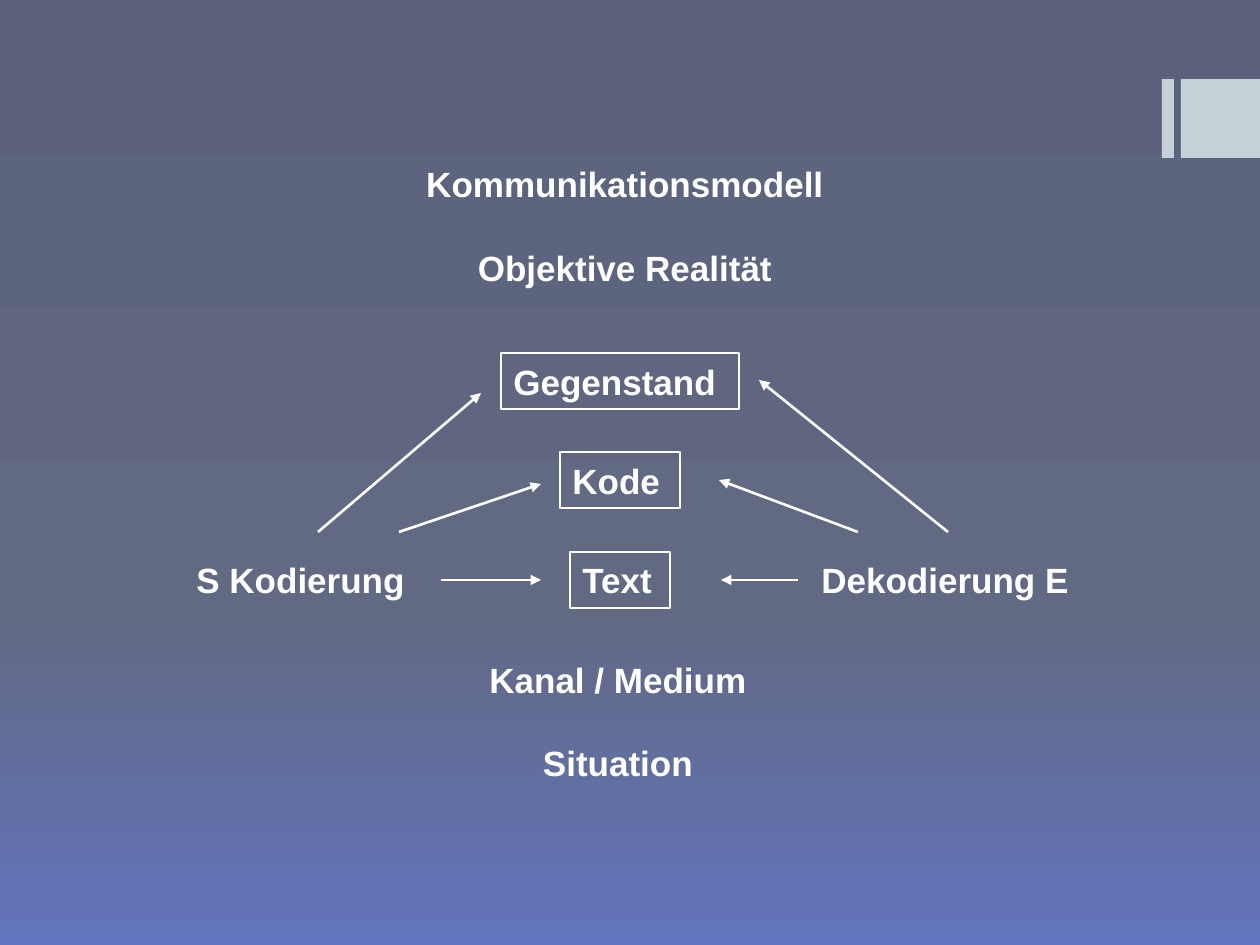
"""Build the slide showing the communication model with its coding and decoding paths."""
import copy

import lxml.etree
import pptx
import pptx.dml.color
import pptx.enum.shapes
import pptx.enum.text
import pptx.oxml.ns
import pptx.util

PX = 914400 // 126
SLIDE_SIZE = (1260, 945)
WHITE = pptx.dml.color.RGBColor(0xFF, 0xFF, 0xFF)
PALE = pptx.dml.color.RGBColor(0xC5, 0xD1, 0xD7)
BACKGROUND = [
    (0, pptx.dml.color.RGBColor(0x5B, 0x61, 0x7A)),
    (0.65, pptx.dml.color.RGBColor(0x62, 0x69, 0x83)),
    (1, pptx.dml.color.RGBColor(0x62, 0x74, 0xBE)),
]
LEFT = pptx.enum.text.PP_ALIGN.LEFT
CENTER = pptx.enum.text.PP_ALIGN.CENTER
RECTANGLE = pptx.enum.shapes.MSO_SHAPE.RECTANGLE

ROW_HEIGHT = 56
ROW_TOPS = {"object": 353, "code": 452, "text": 552}
SIDEBARS = [(1162, 79, 12, 79), (1181, 79, 79, 79)]
TITLE = ("Kommunikationsmodell", 223, 155, 804)
LABELS = [
    ("Objektive Realität", 223, 239, 804, CENTER),
    ("Kanal / Medium", 345, 651, 546, CENTER),
    ("Situation", 345, 735, 546, CENTER),
    ("S Kodierung", 184, ROW_TOPS["text"], 268, LEFT),
    ("Dekodierung E", 809, ROW_TOPS["text"], 377, LEFT),
]
BOX_CENTER = 620
BOXES = [
    ("Gegenstand", ROW_TOPS["object"], 238),
    ("Kode", ROW_TOPS["code"], 120),
    ("Text", ROW_TOPS["text"], 100),
]
ARROWS = [
    ((318, 532), (481, 393)),
    ((399, 532), (541, 484)),
    ((441, 580), (541, 580)),
    ((948, 532), (759, 380)),
    ((858, 532), (719, 480)),
    ((798, 580), (721, 580)),
]


def scale(*lengths):
    return [length * PX for length in lengths]


def paint_background(slide):
    fill = slide.background.fill
    fill.gradient()
    fill.gradient_angle = 270
    stop_list = slide.element.find(".//" + pptx.oxml.ns.qn("a:gsLst"))
    stop_list.append(copy.deepcopy(stop_list[0]))
    for stop, (position, color) in zip(fill.gradient_stops, BACKGROUND):
        stop.position = position
        stop.color.rgb = color


def write_text(shape, text, alignment):
    frame = shape.text_frame
    frame.word_wrap = True
    frame.auto_size = pptx.enum.text.MSO_AUTO_SIZE.NONE
    frame.vertical_anchor = pptx.enum.text.MSO_ANCHOR.MIDDLE
    paragraph = frame.paragraphs[0]
    paragraph.alignment = alignment
    run = paragraph.add_run()
    run.text = text
    run.font.name = "Arial"
    run.font.size = pptx.util.Pt(20)
    run.font.bold = True
    run.font.color.rgb = WHITE


def set_white_line(shape):
    shape.line.color.rgb = WHITE
    shape.line.width = pptx.util.Pt(1.5)


def add_sidebar(slide, bounds):
    shape = slide.shapes.add_shape(RECTANGLE, *scale(*bounds))
    shape.shadow.inherit = False
    shape.fill.solid()
    shape.fill.fore_color.rgb = PALE
    shape.line.fill.background()


def place_title(slide):
    text, left, top, width = TITLE
    title = slide.shapes.title
    title.left, title.top, title.width, title.height = scale(left, top, width, ROW_HEIGHT)
    write_text(title, text, CENTER)


def add_label(slide, text, left, top, width, alignment):
    label = slide.shapes.add_textbox(*scale(left, top, width, ROW_HEIGHT))
    write_text(label, text, alignment)


def add_box(slide, text, top, width):
    left = BOX_CENTER - width // 2
    box = slide.shapes.add_shape(RECTANGLE, *scale(left, top, width, ROW_HEIGHT))
    box.shadow.inherit = False
    box.fill.background()
    set_white_line(box)
    write_text(box, text, LEFT)


def add_arrow(slide, start, end):
    arrow = slide.shapes.add_connector(
        pptx.enum.shapes.MSO_CONNECTOR.STRAIGHT, *scale(*start, *end)
    )
    set_white_line(arrow)
    properties = arrow.element.spPr
    line = properties.find(pptx.oxml.ns.qn("a:ln"))
    lxml.etree.SubElement(line, pptx.oxml.ns.qn("a:tailEnd"), type="triangle")
    lxml.etree.SubElement(properties, pptx.oxml.ns.qn("a:effectLst"))


def main():
    presentation = pptx.Presentation()
    presentation.slide_width, presentation.slide_height = scale(*SLIDE_SIZE)
    slide = presentation.slides.add_slide(presentation.slide_layouts[5])
    paint_background(slide)
    for bounds in SIDEBARS:
        add_sidebar(slide, bounds)
    place_title(slide)
    for label in LABELS:
        add_label(slide, *label)
    for box in BOXES:
        add_box(slide, *box)
    for start, end in ARROWS:
        add_arrow(slide, start, end)
    presentation.save("out.pptx")


if __name__ == "__main__":
    main()
